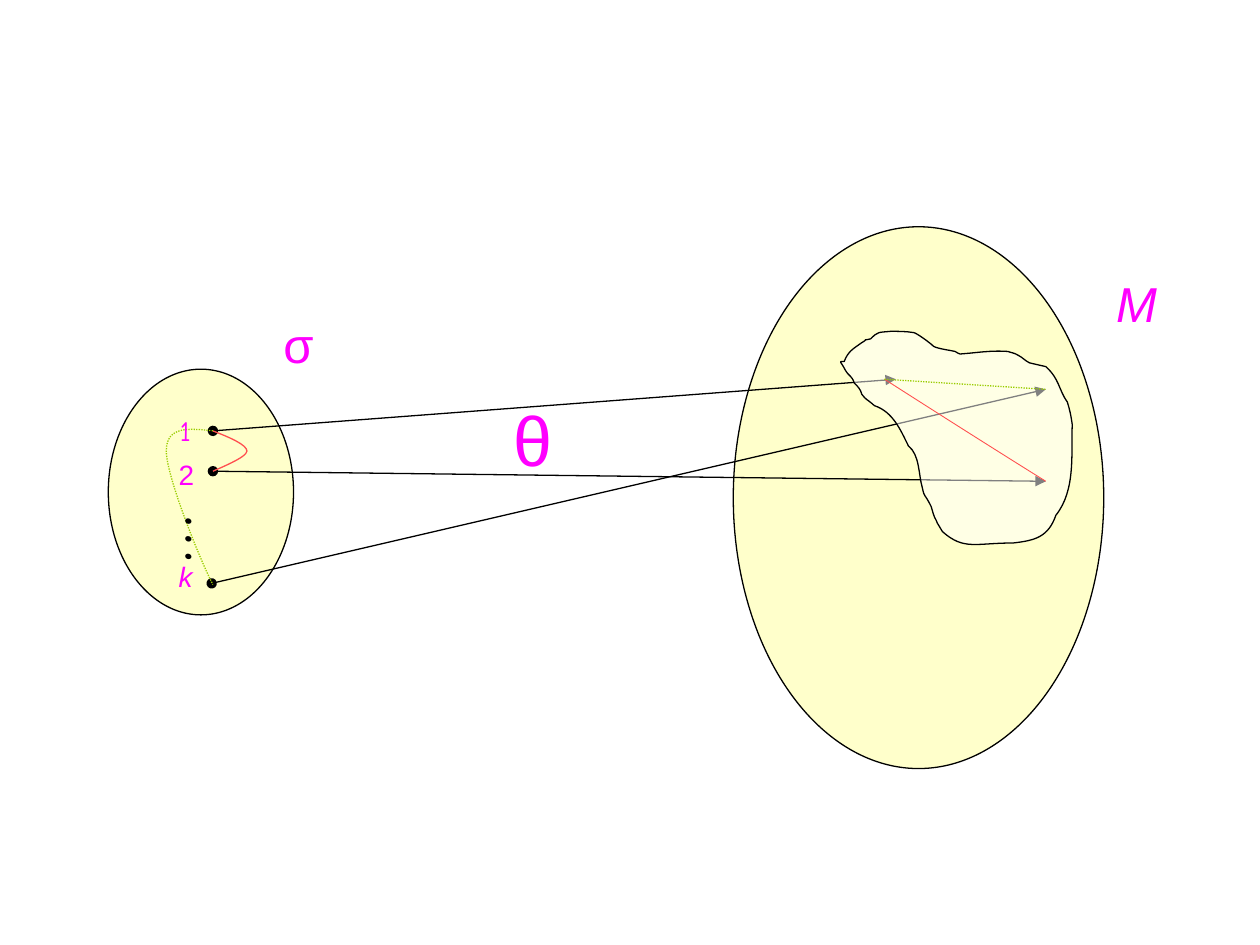
from dataclasses import dataclass
from itertools import chain

from lxml.etree import SubElement
from pptx import Presentation
from pptx.dml.color import RGBColor
from pptx.enum.dml import MSO_LINE as Dash
from pptx.enum.shapes import MSO_CONNECTOR as Connector, MSO_SHAPE as Shape
from pptx.enum.text import MSO_AUTO_SIZE as AutoSize
from pptx.oxml import parse_xml
from pptx.oxml.ns import nsdecls, qn
from pptx.util import Cm, Pt


@dataclass(frozen=True)
class Theme:
    """Colours, fonts and type sizes of the slide."""
    ink: str = "000000"
    set_fill: str = "FFFF99"
    region_fill: str = "FFFFFF"
    label: str = "FF00FF"
    red: str = "FF5050"
    green: str = "99CC00"
    font: str = "Arial"
    comic: str = "Comic Neue"
    small: int = 16
    medium: int = 28
    large: int = 40


THEME = Theme()
POINT_1, POINT_2, POINT_K = (1.69, 3.42), (1.69, 3.74), (1.68, 4.63)
IMAGE_1, IMAGE_2, IMAGE_K = (7.11, 3.01), (8.3, 3.82), (8.3, 3.09)
EDGE_START = (7.02, 3.01)

REGION_START = (6.7, 2.87)
REGION_CURVES = (
    ((6.73, 2.79), (6.77, 2.77), (6.84, 2.72)),
    ((6.91, 2.68), (6.82, 2.71), (6.91, 2.69)),
    ((6.97, 2.63), (6.97, 2.64), (7.07, 2.63)),
    ((7.13, 2.63), (7.19, 2.63), (7.25, 2.64)),
    ((7.27, 2.64), (7.38, 2.72), (7.41, 2.75)),
    ((7.45, 2.77), (7.54, 2.78), (7.58, 2.79)),
    ((7.59, 2.8), (7.62, 2.81), (7.62, 2.81)),
    ((7.76, 2.8), (7.86, 2.78), (8, 2.79)),
    ((8.02, 2.8), (8.05, 2.8), (8.08, 2.82)),
    ((8.12, 2.84), (8.13, 2.86), (8.17, 2.88)),
    ((8.21, 2.89), (8.3, 2.91), (8.3, 2.91)),
    ((8.41, 3.01), (8.4, 3.09), (8.47, 3.19)),
    ((8.49, 3.25), (8.5, 3.3), (8.51, 3.37)),
    ((8.5, 3.59), (8.54, 3.89), (8.38, 4.09)),
    ((8.32, 4.26), (8.22, 4.29), (8.04, 4.31)),
    ((7.74, 4.31), (7.65, 4.37), (7.48, 4.22)),
    ((7.47, 4.2), (7.46, 4.19), (7.45, 4.17)),
    ((7.45, 4.16), (7.43, 4.15), (7.43, 4.13)),
    ((7.41, 4.1), (7.4, 4.05), (7.39, 4.02)),
    ((7.33, 3.9), (7.34, 3.96), (7.32, 3.87)),
    ((7.29, 3.77), (7.3, 3.61), (7.21, 3.54)),
    ((7.15, 3.42), (7.09, 3.27), (6.94, 3.22)),
    ((6.86, 3.15), (6.89, 3.19), (6.84, 3.13)),
    ((6.83, 3.09), (6.81, 3.07), (6.78, 3.04)),
    ((6.76, 2.98), (6.74, 2.99), (6.71, 2.94)),
    ((6.67, 2.86), (6.65, 2.87), (6.7, 2.87)),
)


def lengths(*inches):
    """Turn inch values into lengths."""
    return [Cm(value * 2.54) for value in inches]


def style_line(line, color, width=0.75, dash=None):
    """Give a line its colour, width and dash."""
    line.color.rgb = RGBColor.from_string(color)
    line.width = Pt(width)
    if dash:
        line.dash_style = dash


def fill_half(shape, color):
    """Fill a shape with a half transparent colour."""
    shape.fill.solid()
    shape.fill.fore_color.rgb = RGBColor.from_string(color)
    color_node = shape.fill._xPr.find(qn("a:solidFill"))[0]
    SubElement(color_node, qn("a:alpha"), val="50000")


def add_set(page, *frame):
    """Add an ellipse that stands for a set."""
    ellipse = page.shapes.add_shape(Shape.OVAL, *lengths(*frame))
    ellipse.shadow.inherit = False
    fill_half(ellipse, THEME.set_fill)
    style_line(ellipse.line, THEME.ink)


def add_line(page, start, end, color, dash=None):
    """Add a straight line and return it."""
    line = page.shapes.add_connector(Connector.STRAIGHT, *lengths(*start, *end))
    style_line(line.line, color, dash=dash)
    SubElement(line._element.spPr, qn("a:effectLst"))
    return line


def add_mapping(page, start, end):
    """Add an arrow from a dot to its image."""
    outline = add_line(page, start, end, THEME.ink).line._get_or_add_ln()
    SubElement(outline, qn("a:headEnd"), type="oval")
    SubElement(outline, qn("a:tailEnd"), type="triangle")


def bend_segments(shape):
    """Join every three straight segments into one cubic curve."""
    segments = list(shape._element.iter(qn("a:lnTo")))
    for index in range(0, len(segments), 3):
        cubic = parse_xml(f"<a:cubicBezTo {nsdecls('a')}/>")
        segments[index].addprevious(cubic)
        for segment in segments[index:index + 3]:
            cubic.append(segment[0])
            segment.getparent().remove(segment)


def add_curve(page, start, curves, color, width=0.75, dash=None, fill=None):
    """Add a curved outline, closed when it is filled."""
    builder = page.shapes.build_freeform(*lengths(*start))
    points = [lengths(*point) for point in chain.from_iterable(curves)]
    builder.add_line_segments(points, close=bool(fill))
    curve = builder.convert_to_shape()
    bend_segments(curve)
    curve.shadow.inherit = False
    if fill:
        fill_half(curve, fill)
    else:
        curve.fill.background()
    style_line(curve.line, color, width, dash)


def add_label(page, text, frame, size, color=THEME.label, font=THEME.font,
              italic=None, wrap=False, rotation=0):
    """Add a one-symbol text box."""
    box = page.shapes.add_textbox(*lengths(*frame))
    box.rotation = rotation
    box.text_frame.text = text
    box.text_frame.word_wrap = wrap
    box.text_frame.auto_size = AutoSize.SHAPE_TO_FIT_TEXT
    span = box.text_frame.paragraphs[0].runs[0]
    span.font.name = font
    span.font.size = Pt(size)
    span.font.italic = italic
    span.font.color.rgb = RGBColor.from_string(color)


def main():
    """Build the slide and save the deck."""
    deck = Presentation()
    deck.slide_width, deck.slide_height = lengths(10, 7.5)
    page = deck.slides.add_slide(deck.slide_layouts[6])

    add_set(page, 0.86, 2.93, 1.47, 1.95)
    add_set(page, 5.82, 1.8, 2.94, 4.3)
    add_label(page, "σ", (2.15, 2.45, 0.51, 0.58), THEME.medium)
    add_label(page, "M", (8.76, 2.12, 0.61, 0.58), THEME.medium, italic=True)

    for start, end in ((POINT_1, IMAGE_1), (POINT_2, IMAGE_2), (POINT_K, IMAGE_K)):
        add_mapping(page, start, end)

    add_curve(page, REGION_START, REGION_CURVES, THEME.ink, fill=THEME.region_fill)
    add_curve(page, POINT_1, [((1.82, 3.47), (1.96, 3.53), (1.96, 3.58)),
                              ((1.96, 3.63), (1.73, 3.72), POINT_2)], THEME.red)
    add_curve(page, EDGE_START, [((7.55, 3.35), (8.09, 3.69), IMAGE_2)],
              THEME.red, width=0.5)
    add_curve(page, POINT_1, [((1.5, 3.4), (1.32, 3.38), (1.32, 3.58)),
                              ((1.32, 3.78), (1.59, 4.45), (1.69, 4.64))],
              THEME.green, dash=Dash.ROUND_DOT)
    add_line(page, EDGE_START, IMAGE_K, THEME.green, Dash.ROUND_DOT)

    add_label(page, "θ", (3.98, 3.1, 0.6, 0.79), THEME.large, wrap=True)
    add_label(page, "1", (1.33, 3.23, 0.35, 0.38), THEME.small, font=THEME.comic)
    add_label(page, "2", (1.32, 3.58, 0.3, 0.38), THEME.small, wrap=True)
    add_label(page, "k", (1.32, 4.39, 0.36, 0.38), THEME.small, italic=True)
    add_label(page, "…", (1.07, 3.82, 0.59, 0.9), THEME.large, THEME.ink,
              THEME.comic, rotation=270)
    deck.save("out.pptx")


if __name__ == "__main__":
    main()
